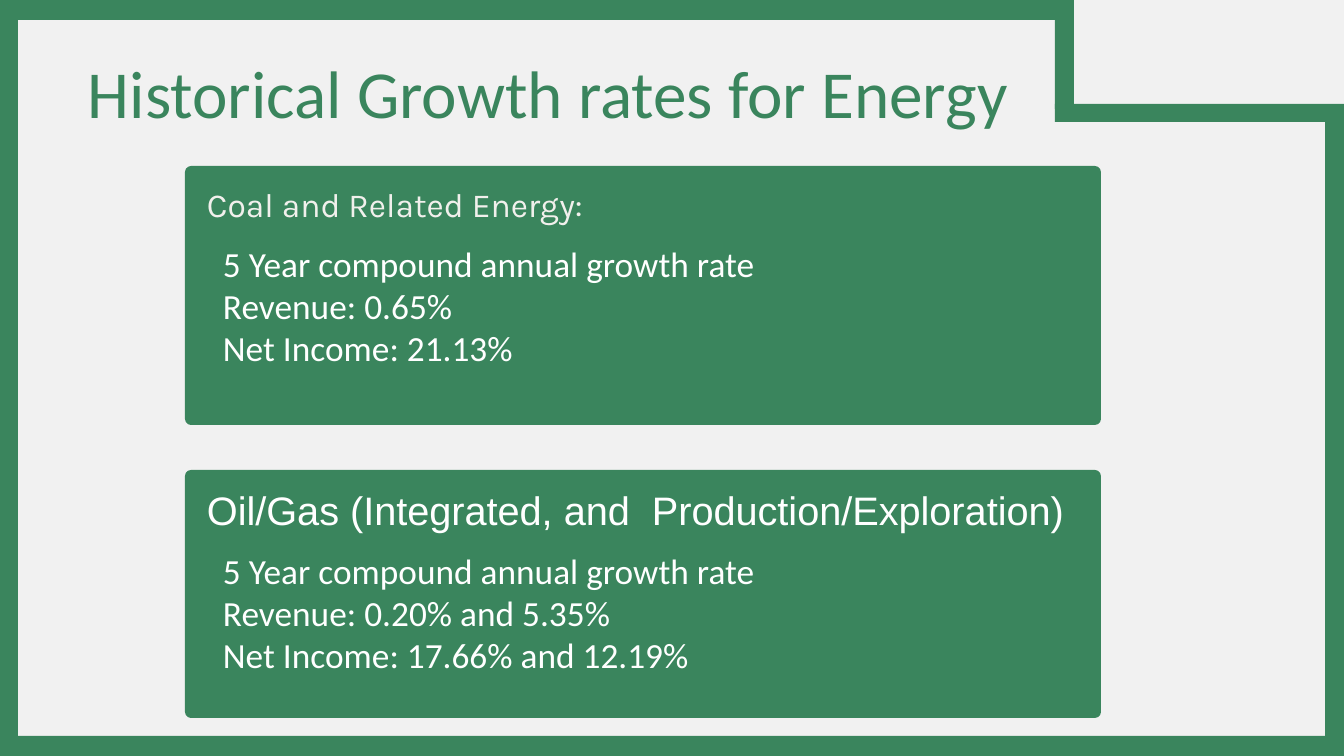
from pptx import Presentation
from pptx.dml.color import RGBColor
from pptx.enum.shapes import MSO_SHAPE
from pptx.enum.text import MSO_ANCHOR, MSO_AUTO_SIZE, PP_ALIGN
from pptx.util import Pt

EMU_PER_PX = 914400 / 134.4
SLIDE_WIDTH, SLIDE_HEIGHT = 1344, 756
GREEN = RGBColor(0x3A, 0x85, 0x5D)
PAPER = RGBColor(0xF1, 0xF1, 0xF1)
CREAM = RGBColor(0xF1, 0xF0, 0xEC)
WHITE = RGBColor(0xFF, 0xFF, 0xFF)

CARD_LEFT, CARD_WIDTH, CARD_RADIUS = 185, 916, 6
TEXT_LEFT = 207

FRAME_BARS = [
    (0, 0, 1074, 20),
    (0, 0, 18, SLIDE_HEIGHT),
    (1055, 0, 19, 109),
    (1055, 104, 289, 18),
    (1325, 112, 19, 638),
    (0, 736, SLIDE_WIDTH, 20),
]


def px(value):
    return round(value * EMU_PER_PX)


def place(*box):
    return [px(value) for value in box]


def format_text(shape, lines, font_name, size, color, inset=0, line_spacing=None):
    frame = shape.text_frame
    frame.word_wrap = True
    frame.auto_size = MSO_AUTO_SIZE.NONE
    frame.vertical_anchor = MSO_ANCHOR.TOP
    frame.margin_left = frame.margin_right = px(inset)
    frame.margin_top = frame.margin_bottom = px(inset)
    frame.text = "\n".join(lines)
    for paragraph in frame.paragraphs:
        paragraph.line_spacing = line_spacing
        paragraph.font.name = font_name
        paragraph.font.size = Pt(size)
        paragraph.font.color.rgb = color


def add_title(slide, text):
    title = slide.shapes.title
    title.left, title.top, title.width, title.height = place(69, 38, 958, 96)
    format_text(title, [text], "Calibri", 36, GREEN, inset=13)
    title.text_frame.paragraphs[0].alignment = PP_ALIGN.CENTER


def add_green_shape(slide, kind, box):
    shape = slide.shapes.add_shape(kind, *place(*box))
    shape.shadow.inherit = False
    shape.fill.solid()
    shape.fill.fore_color.rgb = GREEN
    shape.line.fill.background()
    return shape


def add_text(slide, box, lines, *style, **options):
    shape = slide.shapes.add_textbox(*place(*box))
    format_text(shape, lines, *style, **options)


def add_growth_card(slide, top, height, heading, heading_top, heading_style,
                    rates, rates_top):
    card = add_green_shape(slide, MSO_SHAPE.ROUNDED_RECTANGLE,
                           (CARD_LEFT, top, CARD_WIDTH, height))
    card.adjustments[0] = CARD_RADIUS / height
    add_text(slide, (TEXT_LEFT, heading_top, 882, 46), [heading],
             *heading_style, line_spacing=0.96)
    add_text(slide, (TEXT_LEFT, rates_top, 664, 160),
             ["5 Year compound annual growth rate", *rates],
             "Calibri", 18.9, WHITE, inset=16)


def main():
    presentation = Presentation()
    presentation.slide_width = px(SLIDE_WIDTH)
    presentation.slide_height = px(SLIDE_HEIGHT)
    slide = presentation.slides.add_slide(presentation.slide_layouts[5])
    slide.background.fill.solid()
    slide.background.fill.fore_color.rgb = PAPER

    add_title(slide, "Historical Growth rates for Energy")
    add_growth_card(slide, 166, 259, "Coal and Related Energy:", 187,
                    ("Karla", 18, CREAM),
                    ["Revenue: 0.65%", "Net Income: 21.13%"], 226)
    add_growth_card(slide, 470, 248,
                    "Oil/Gas (Integrated, and  Production/Exploration)", 489,
                    ("Arial", 21.3, WHITE),
                    ["Revenue: 0.20% and 5.35%",
                     "Net Income: 17.66% and 12.19%"], 533)
    for bar in FRAME_BARS:
        add_green_shape(slide, MSO_SHAPE.RECTANGLE, bar)

    presentation.save("out.pptx")


if __name__ == "__main__":
    main()
